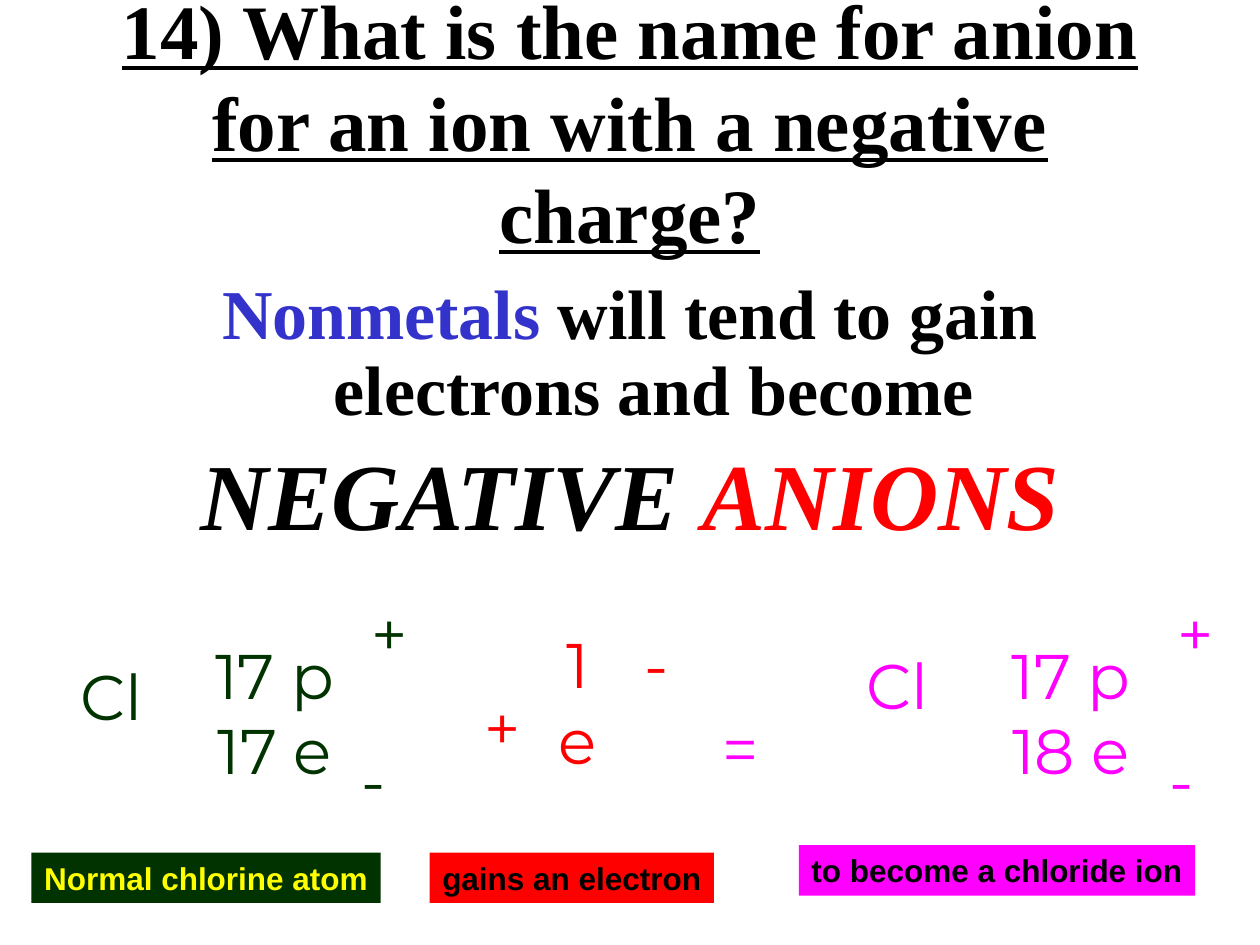
from pptx import Presentation
from pptx.dml.color import RGBColor
from pptx.enum.shapes import MSO_SHAPE as Shape
from pptx.enum.text import MSO_ANCHOR as Anchor, PP_ALIGN as Align
from pptx.util import Pt

THEME = {
    "black": "000000", "blue": "3333CC", "green": "003300",
    "yellow": "FFFF00", "red": "FF0000", "magenta": "FF00FF",
    "serif": "Times New Roman", "symbol": "Montserrat", "label": "Arial",
    "title_size": 44, "body_size": 40, "emphasis_size": 54,
    "symbol_size": 36, "label_size": 18,
}

TITLE = "14) What is the name for anion for an ion with a negative charge?"
TITLE_BOX = (54, 24, 612, 90)
BODY_BOX = (54, 156, 612, 180)
BODY = [
    ([("Nonmetals", "blue"), (" will tend to gain electrons and become", "black")],
     {"size": "body_size"}),
    ([("NEGATIVE ", "black"), ("ANIONS", "red")],
     {"size": "emphasis_size", "italic": True}),
]
STEPS = [
    {"color": "green", "label": "Normal chlorine atom", "label_color": "yellow",
     "label_box": (18, 487.2, 199.5, 28.8),
     "symbols": [(["17 p", "17 e"], (115, 360, 84, 102)),
                 (["+"], (205, 336, 18, 36)),
                 (["-"], (198.5, 420, 30, 15)),
                 (["Cl"], (18.5, 372, 90, 99))]},
    {"color": "red", "label": "gains an electron", "label_color": "black",
     "label_box": (245.5, 487.2, 162.5, 28.8),
     "symbols": [(["+"], (270, 390, 24, 30)),
                 (["1e"], (306, 354, 48, 102)),
                 (["-"], (360, 354, 30, 15))]},
    {"color": "magenta", "label": "to become a chloride ion", "label_color": "black",
     "label_box": (456.5, 483, 226.5, 28.8),
     "symbols": [(["="], (396, 402, 54, 27)),
                 (["Cl"], (468, 366, 90, 99)),
                 (["17 p", "18 e"], (570, 360, 84, 102)),
                 (["+"], (666, 336, 18, 36)),
                 (["-"], (660, 420, 30, 15))]},
]


def color_of(name):
    return RGBColor.from_string(THEME[name])


def add_text(frame, runs, size, font, bold=False, italic=False, underline=False,
             hanging=0, line_spacing=None, space_before=0):
    first = frame.paragraphs[0]
    paragraph = frame.add_paragraph() if first.runs else first
    paragraph.alignment = Align.CENTER
    paragraph.space_before = Pt(space_before)
    if line_spacing:
        paragraph.line_spacing = line_spacing
    if hanging:
        properties = paragraph._p.get_or_add_pPr()
        properties.set("marL", str(Pt(hanging)))
        properties.set("indent", str(-Pt(hanging)))
    for text, color in runs:
        run = paragraph.add_run()
        run.text = text
        run.font.name = THEME[font]
        run.font.size = Pt(THEME[size])
        run.font.color.rgb = color_of(color)
        run.font.bold, run.font.italic, run.font.underline = bold, italic, underline


def add_box(shapes, box, wrap=False, anchor=Anchor.TOP, fill=None):
    place = [Pt(length) for length in box]
    if fill:
        shape = shapes.add_shape(Shape.RECTANGLE, *place)
        shape.shadow.inherit = False
        shape.fill.solid()
        shape.fill.fore_color.rgb = color_of(fill)
        shape.line.fill.background()
    else:
        shape = shapes.add_textbox(*place)
    frame = shape.text_frame
    frame.word_wrap = wrap
    frame.vertical_anchor = anchor
    return frame


def add_step(slide, step):
    shapes = slide.shapes.add_group_shape().shapes
    for lines, box in step["symbols"]:
        frame = add_box(shapes, box)
        for line in lines:
            add_text(frame, [(line, step["color"])], "symbol_size", "symbol")
    frame = add_box(shapes, step["label_box"], fill=step["color"])
    add_text(frame, [(step["label"], step["label_color"])],
             "label_size", "label", bold=True)


def main():
    presentation = Presentation()
    presentation.slide_width, presentation.slide_height = Pt(720), Pt(540)
    slide = presentation.slides.add_slide(presentation.slide_layouts[6])

    title = add_box(slide.shapes, TITLE_BOX, wrap=True, anchor=Anchor.MIDDLE)
    add_text(title, [(TITLE, "black")], "title_size", "serif",
             bold=True, underline=True)

    body = add_box(slide.shapes, BODY_BOX, wrap=True)
    for runs, style in BODY:
        add_text(body, runs, font="serif", bold=True, hanging=27, line_spacing=0.9,
                 space_before=THEME[style["size"]] * 0.2, **style)

    for step in STEPS:
        add_step(slide, step)
    presentation.save("out.pptx")


if __name__ == "__main__":
    main()
